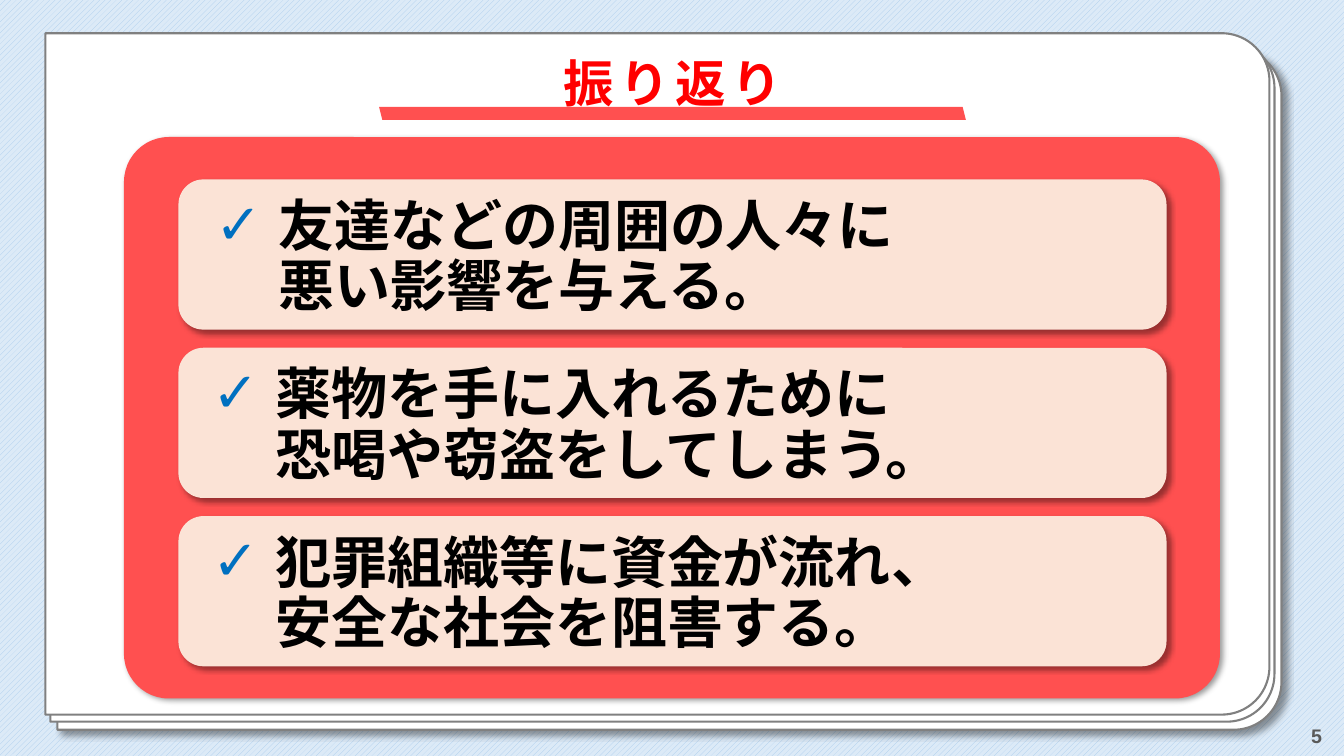
from dataclasses import dataclass

import pptx
import pptx.dml.color
import pptx.enum.dml
import pptx.enum.lang
import pptx.enum.shapes
import pptx.enum.text
import pptx.oxml
import pptx.oxml.ns
import pptx.shapes.autoshape
import pptx.slide
import pptx.text.text
import pptx.util
from pptx.dml.color import RGBColor
from pptx.enum.shapes import MSO_SHAPE
from pptx.enum.text import MSO_ANCHOR, PP_ALIGN
from pptx.util import Inches

BLACK = RGBColor(0x00, 0x00, 0x00)
WHITE = RGBColor(0xFF, 0xFF, 0xFF)
SHEET_EDGE = RGBColor(0x80, 0x80, 0x80)
CORAL = RGBColor(0xFF, 0x50, 0x50)
PEACH = RGBColor(0xFB, 0xE3, 0xD6)
TITLE_RED = RGBColor(0xFF, 0x00, 0x00)
CHECK_BLUE = RGBColor(0x00, 0x70, 0xC0)
NUMBER_GRAY = RGBColor(0x59, 0x59, 0x59)
STRIPE = RGBColor(0xA6, 0xCA, 0xEC)
BACKDROP = RGBColor(0xDC, 0xEA, 0xF7)

FONT = "Arial"
CARD_TOP, CARD_PITCH = 1.78, 1.67
HANGING = 0.62


@dataclass(frozen=True)
class Sheet:
    left: float
    top: float
    shadow_distance: float = 0


@dataclass(frozen=True)
class Card:
    lines: tuple[str, ...]
    indent: float = 0.79


SHEETS = (Sheet(3.26, -2.21, 5), Sheet(3.19, -2.29), Sheet(3.14, -2.36))
CARDS = (
    Card(("友達などの周囲の人々に", "悪い影響を与える。"), 0.82),
    Card(("薬物を手に入れるために", "恐喝や窃盗をしてしまう。")),
    Card(("犯罪組織等に資金が流れ、", "安全な社会を阻害する。")),
)


def add_filled(
    slide: pptx.slide.Slide, kind: MSO_SHAPE, left: float, top: float,
    width: float, height: float, color: RGBColor, shadow_distance: float = 0,
) -> pptx.shapes.autoshape.Shape:
    """Add a borderless shape, with a soft shadow if a distance in points is given."""
    shape = slide.shapes.add_shape(
        kind, Inches(left), Inches(top), Inches(width), Inches(height))
    shape.fill.solid()
    shape.fill.fore_color.rgb = color
    shape.line.fill.background()
    shape.shadow.inherit = False
    if shadow_distance:
        effects = shape._element.spPr.find(pptx.oxml.ns.qn("a:effectLst"))
        distance = pptx.util.Pt(shadow_distance)
        effects.append(pptx.oxml.parse_xml(
            f'<a:outerShdw {pptx.oxml.ns.nsdecls("a")} blurRad="{pptx.util.Pt(4)}" '
            f'dist="{distance}" dir="2700000" algn="tl" rotWithShape="0">'
            f'<a:srgbClr val="{BLACK}"><a:alpha val="40000"/></a:srgbClr></a:outerShdw>'))
    return shape


def add_run(
    paragraph: pptx.text.text._Paragraph, text: str, size: float, color: RGBColor,
) -> pptx.text.text._Run:
    run = paragraph.add_run()
    run.text = text
    run.font.name = FONT
    run.font.size = pptx.util.Pt(size)
    run.font.bold = True
    run.font.color.rgb = color
    run.font.language_id = pptx.enum.lang.MSO_LANGUAGE_ID.JAPANESE
    return run


def add_check(paragraph: pptx.text.text._Paragraph, indent: float) -> None:
    properties = paragraph._p.get_or_add_pPr()
    properties.set("marL", str(Inches(indent)))
    properties.set("indent", str(-Inches(HANGING)))
    namespace = pptx.oxml.ns.nsdecls("a")
    for bullet_part in (
        f'<a:buClr {namespace}><a:srgbClr val="{CHECK_BLUE}"/></a:buClr>',
        f'<a:buFont {namespace} typeface="{FONT}"/>',
        f'<a:buChar {namespace} char="✓"/>',
    ):
        properties.append(pptx.oxml.parse_xml(bullet_part))


def add_sheet(slide: pptx.slide.Slide, sheet: Sheet) -> None:
    paper = add_filled(slide, MSO_SHAPE.ROUND_2_SAME_RECTANGLE, sheet.left, sheet.top,
                       6.76, 12.14, WHITE, sheet.shadow_distance)
    paper.rotation = 90
    paper.adjustments[0] = 0.07
    paper.adjustments[1] = 0
    paper.line.color.rgb = SHEET_EDGE
    paper.line.width = pptx.util.Pt(1.5)


def add_card(slide: pptx.slide.Slide, card: Card, top: float) -> None:
    box = add_filled(slide, MSO_SHAPE.ROUNDED_RECTANGLE, 1.77, top, 9.8, 1.49, PEACH, 3)
    frame = box.text_frame
    frame.word_wrap = True
    frame.vertical_anchor = MSO_ANCHOR.MIDDLE
    frame.margin_left = frame.margin_right = Inches(0.1)
    frame.margin_top, frame.margin_bottom = Inches(0.2), Inches(0.12)
    paragraph = frame.paragraphs[0]
    add_check(paragraph, card.indent)
    paragraph.alignment = PP_ALIGN.LEFT
    paragraph.line_spacing = 0.9
    for index, line in enumerate(card.lines):
        if index:
            paragraph.add_line_break()
        add_run(paragraph, line, 40, BLACK)


def add_title(slide: pptx.slide.Slide) -> None:
    title = slide.shapes.title
    slide.shapes._spTree.append(title._element)
    title.left, title.top = Inches(3.76), Inches(0.33)
    title.width, title.height = Inches(5.82), Inches(0.85)
    frame = title.text_frame
    frame.auto_size = pptx.enum.text.MSO_AUTO_SIZE.NONE
    frame.vertical_anchor = MSO_ANCHOR.BOTTOM
    paragraph = frame.paragraphs[0]
    paragraph.alignment = PP_ALIGN.CENTER
    paragraph.line_spacing = 0.9
    heading = add_run(paragraph, "振り返り", 36, TITLE_RED)
    heading._r.get_or_add_rPr().set("spc", "400")


def add_page_number(slide: pptx.slide.Slide) -> None:
    number = slide.shapes.add_textbox(Inches(10.21), Inches(7.1), Inches(3), Inches(0.4))
    number.text_frame.word_wrap = True
    number.text_frame.vertical_anchor = MSO_ANCHOR.MIDDLE
    paragraph = number.text_frame.paragraphs[0]
    paragraph.alignment = PP_ALIGN.RIGHT
    add_run(paragraph, "5", 14, NUMBER_GRAY)


def main() -> None:
    deck = pptx.Presentation()
    deck.slide_width, deck.slide_height = Inches(13.33), Inches(7.5)
    slide = deck.slides.add_slide(deck.slide_layouts[5])

    backdrop = slide.background.fill
    backdrop.patterned()
    backdrop.pattern = pptx.enum.dml.MSO_PATTERN.WIDE_UPWARD_DIAGONAL
    backdrop.fore_color.rgb = STRIPE
    backdrop.back_color.rgb = BACKDROP

    for sheet in SHEETS:
        add_sheet(slide, sheet)
    panel = add_filled(slide, MSO_SHAPE.ROUNDED_RECTANGLE, 1.23, 1.36, 10.87, 5.57, CORAL, 3)
    panel.adjustments[0] = 0.08
    add_page_number(slide)
    add_title(slide)
    for row, card in enumerate(CARDS):
        add_card(slide, card, CARD_TOP + row * CARD_PITCH)
    underline = add_filled(slide, MSO_SHAPE.PARALLELOGRAM, 3.76, 1.06, 5.82, 0.13, CORAL)
    underline._element.spPr.xfrm.set("flipH", "1")

    deck.save("out.pptx")


if __name__ == "__main__":
    main()
